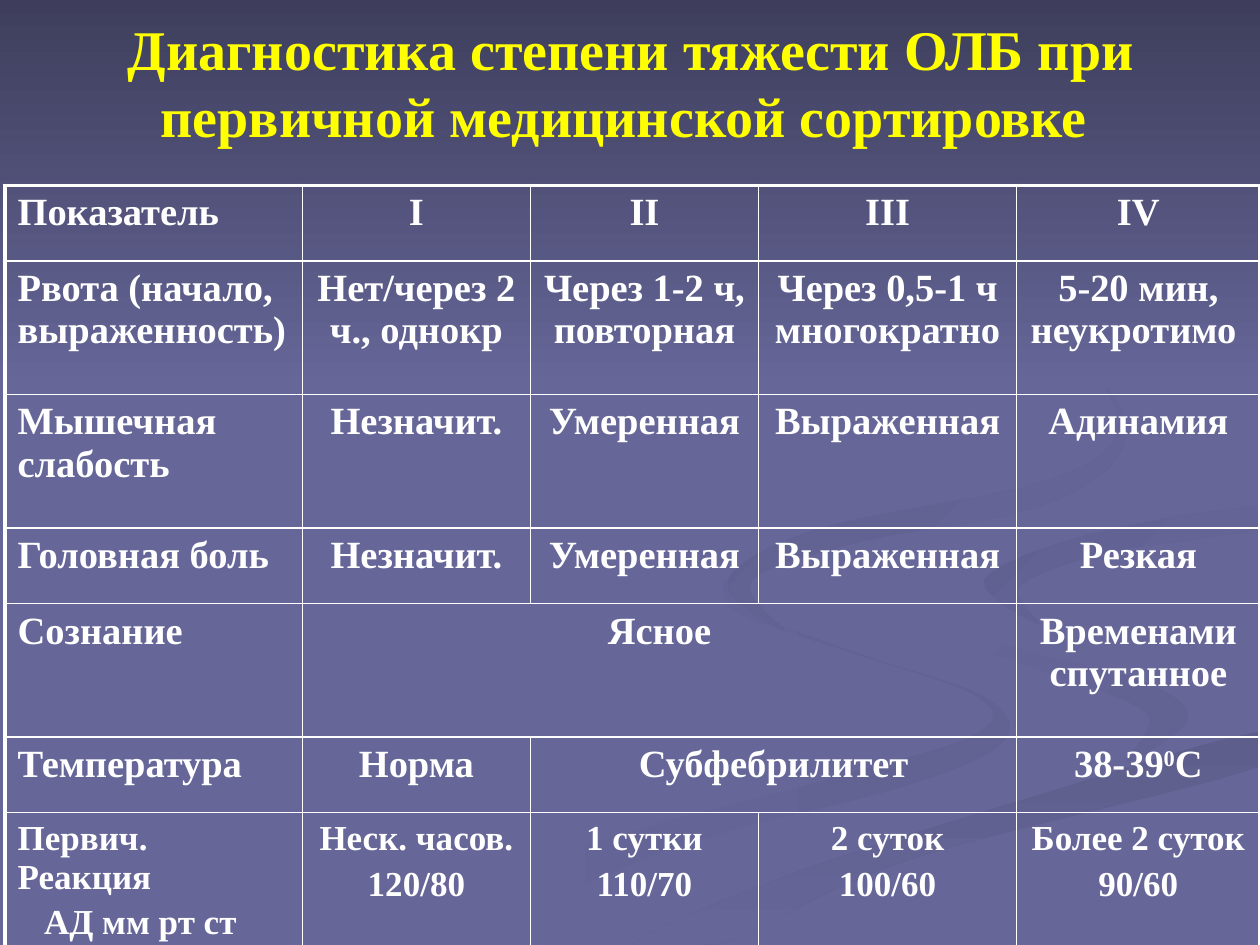
from lxml import etree
from pptx import Presentation, util as u
from pptx.dml.color import RGBColor
from pptx.enum import text
from pptx.oxml.ns import qn

FONT, WHITE, YELLOW, BASE = "Times New Roman", "FFFFFF", "FFFF00", "666699"
WIDTH, HEIGHT = 10, 7.5

TITLE = "Диагностика степени тяжести ОЛБ при первичной медицинской сортировке "

# Table content: None continues the cell on its left, a tuple holds
# paragraphs, "^" encloses a superscript
ROWS = [
    ["Показатель", "I", "II", "III", "IV"],
    ["Рвота (начало, выраженность)", "Нет/через 2 ч., однокр", "Через 1-2 ч, повторная",
     "Через 0,5-1 ч многократно", "5-20 мин, неукротимо "],
    ["Мышечная слабость", "Незначит.", "Умеренная", "Выраженная", "Адинамия"],
    ["Головная боль", "Незначит.", "Умеренная", "Выраженная", "Резкая"],
    ["Сознание", "Ясное", None, None, "Временами спутанное"],
    ["Температура", "Норма", "Субфебрилитет", None, "38-39^0^С"],
    [("Первич. Реакция", "АД мм рт ст"), ("Неск. часов.", "120/80"), ("1 сутки", "110/70"),
     ("2 суток", "100/60"), ("Более 2 суток", "90/60")],
]
COLUMNS = [2.36, 1.81, 1.81, 2.05, 1.93]
LOW, TALL = 0.6, 1.06
HEIGHTS = [LOW, TALL, TALL, LOW, TALL, LOW, TALL]
TABLE_LEFT, TABLE_TOP = 0.04, 1.47
THIN, THICK = 1, 2.25

# Background ribbons: first colour, last colour, angle, knots of a smooth outline
RIBBONS = [
    (BASE, "626293", 0, [
        (7.81, 5.53), (6.82, 5.19), (5.94, 4.85), (5.75, 4.6), (5.86, 4.87), (6.79, 5.19),
        (7.76, 5.53), (7.74, 5.83), (6.52, 6.2), (4.58, 6.74), (3, 7.49), (3.61, 7.49),
        (5.32, 6.74), (7.21, 6.23), (7.97, 5.88)]),
    (BASE, "626293", 45, [
        (9.43, 5.7), (9.05, 5.4), (7.92, 5.09), (7.24, 4.64), (7.55, 5.05), (8.38, 5.36),
        (9.11, 5.67), (8.94, 6.05)]),
    ("5E5E8C", BASE, 90, [
        (5.03, 7.49), (5.71, 7.49), (7.22, 6.82), (9.98, 6.09), (9.98, 5.81), (8.31, 6.29),
        (6.3, 6.93)]),
    ("606091", BASE, 45, [
        (7.81, 4.6), (8.26, 4.96), (8.09, 4.66), (8.78, 4.39), (9.98, 4.2), (9.98, 4.02),
        (8.65, 4.24)]),
    ("5F5F8E", BASE, 45, [
        (6.83, 4.3), (8.25, 4.02), (8.92, 3.54), (8.64, 2.91), (7.62, 2.33), (8.55, 2.85),
        (8.88, 3.41), (8.3, 3.82), (6.49, 4.2), (5.77, 4.62), (6.22, 5), (5.96, 4.61)]),
]
BAND = ("3E3E5C", BASE, 90, [(0, 0), (0, 3.08), (WIDTH, 3.08), (WIDTH, 0)])


def colour(code):
    return RGBColor.from_string(code)


def write(para, words, size=22, code=WHITE, align=None, before=0, raised=False):
    """Add a formatted run to a paragraph."""
    para.alignment = align
    para.space_before = u.Pt(before)
    span = para.add_run()
    span.text = words
    font = span.font
    font.name, font.size, font.bold = FONT, u.Pt(size), True
    font.color.rgb = colour(code)
    if raised:
        font._element.set("baseline", "30000")


def smooth(knots, steps=6):
    """Points of a closed Catmull-Rom curve through the knots, kept on the slide."""
    points = []
    for i in range(len(knots)):
        around = [knots[(i + k) % len(knots)] for k in (-1, 0, 1, 2)]
        for step in range(steps):
            t = step / steps
            x, y = (b + t / 2 * (c - a + t * (2 * a - 5 * b + 4 * c - d
                                              + t * (3 * (b - c) + d - a)))
                    for a, b, c, d in zip(*around))
            points.append((min(x, WIDTH), min(y, HEIGHT)))
    return points


def draw_outline(page, first, last, angle, points):
    scale = u.Inches(1)
    points = [(round(x * scale), round(y * scale)) for x, y in points]
    builder = page.shapes.build_freeform(*points[0])
    builder.add_line_segments(points[1:], close=True)
    shape = builder.convert_to_shape()
    shape.shadow.inherit = False
    shape.line.fill.background()
    shape.fill.gradient()
    shape.fill.gradient_angle = -angle % 360
    for stop, code in zip(shape.fill.gradient_stops, (first, last)):
        stop.color.rgb = colour(code)


def draw_borders(cell, widths):
    """Set left, right, top and bottom lines, in that order."""
    props = cell._tc.get_or_add_tcPr()
    for place, (side, width) in enumerate(zip("LRTB", widths)):
        line = etree.Element(qn("a:ln" + side), w=str(u.Pt(width)))
        fill = etree.SubElement(line, qn("a:solidFill"))
        etree.SubElement(fill, qn("a:srgbClr"), val=WHITE)
        props.insert(place, line)


def fill_cell(cell, content, column):
    paragraphs = content if isinstance(content, tuple) else (content,)
    size = 20 if len(paragraphs) > 1 else 22
    align = text.PP_ALIGN.CENTER if column else text.PP_ALIGN.LEFT
    frame = cell.text_frame
    for index, words in enumerate(paragraphs):
        para = frame.add_paragraph() if index else frame.paragraphs[0]
        if index and not column:
            para._p.get_or_add_pPr().set("marL", str(u.Inches(0.21)))
        for part, piece in enumerate(words.split("^")):
            write(para, piece, size, align=align, before=0.2 * size * bool(index),
                  raised=part % 2 == 1)


def draw_table(page):
    frame = page.shapes.add_table(
        len(ROWS), len(COLUMNS), u.Inches(TABLE_LEFT), u.Inches(TABLE_TOP),
        u.Inches(sum(COLUMNS)), u.Inches(sum(HEIGHTS)))
    table = frame.table
    table.first_row = table.horz_banding = False
    for column, width in zip(table.columns, COLUMNS):
        column.width = u.Inches(width)
    for row, height in zip(table.rows, HEIGHTS):
        row.height = u.Inches(height)
    for r, row in enumerate(ROWS):
        for c, content in enumerate(row):
            cell = table.cell(r, c)
            cell.fill.background()
            if content is None:
                continue
            end = c
            while end + 1 < len(row) and row[end + 1] is None:
                end += 1
            if end > c:
                cell.merge(table.cell(r, end))
            edges = (c == 0, end == len(row) - 1, r == 0, r == len(ROWS) - 1)
            draw_borders(cell, [THICK if edge else THIN for edge in edges])
            fill_cell(cell, content, c)


def main():
    deck = Presentation()
    deck.slide_width, deck.slide_height = u.Inches(WIDTH), u.Inches(HEIGHT)
    page = deck.slides.add_slide(deck.slide_layouts[5])

    # Background: ribbons, then the dark band across the top
    page.background.fill.solid()
    page.background.fill.fore_color.rgb = colour(BASE)
    for first, last, angle, knots in RIBBONS:
        draw_outline(page, first, last, angle, smooth(knots))
    draw_outline(page, *BAND)

    # Title, brought in front of the background
    title = page.shapes.title
    title._element.getparent().append(title._element)
    title.left, title.top = u.Inches(0.51), u.Inches(0.21)
    title.width, title.height = u.Inches(9), u.Inches(0.88)
    title.text_frame.word_wrap = True
    title.text_frame.auto_size = text.MSO_AUTO_SIZE.NONE
    title.text_frame.vertical_anchor = text.MSO_ANCHOR.MIDDLE
    write(title.text_frame.paragraphs[0], TITLE, 32, YELLOW, text.PP_ALIGN.CENTER)

    draw_table(page)
    deck.save("out.pptx")


if __name__ == "__main__":
    main()
